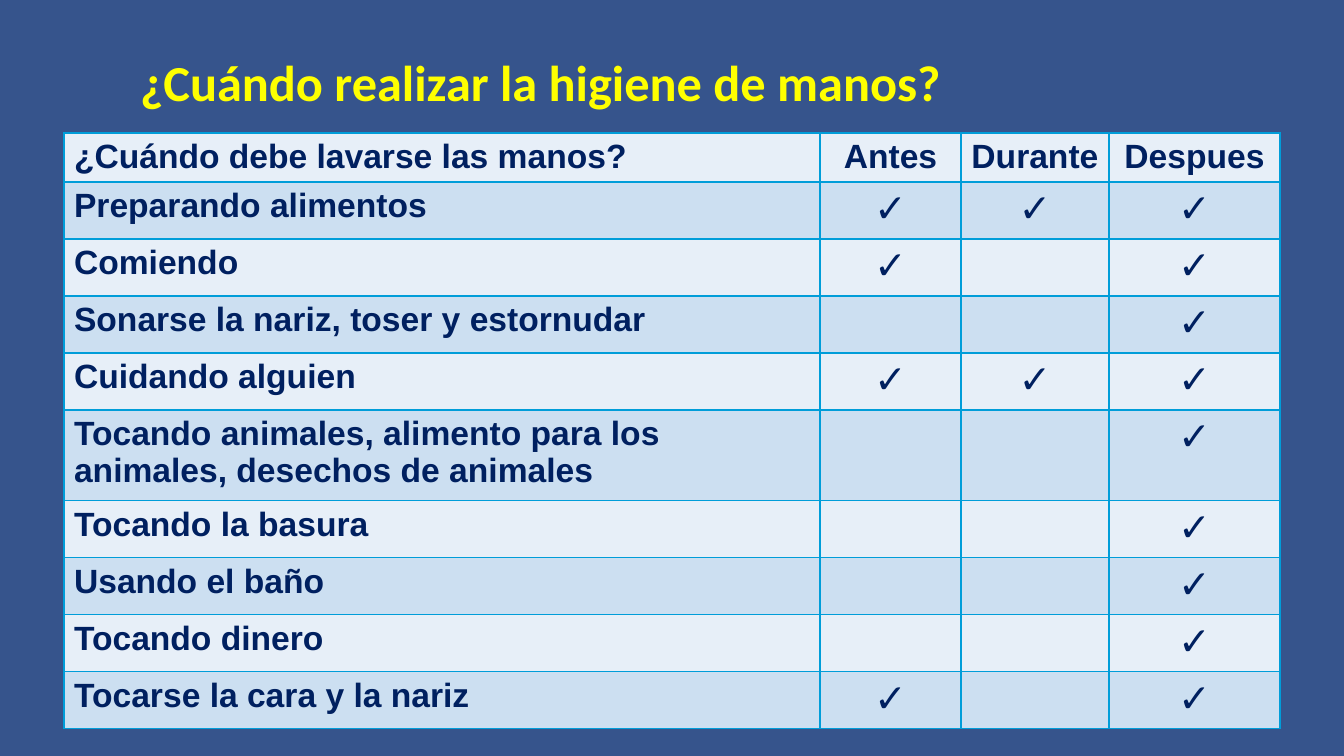
from lxml import etree
from pptx import Presentation
from pptx.dml.color import RGBColor
from pptx.enum.text import MSO_ANCHOR as Anchor, MSO_AUTO_SIZE as AutoSize, PP_ALIGN as Align
from pptx.oxml.ns import qn
from pptx.util import Emu, Pt

PX = 914400 / 100.8
NAVY, YELLOW, BLUE, CYAN = "002060", "FFFF00", "36548C", "009DD9"
BANDS = ["E7EFF8", "CCDFF1"]


def px(length):
    return Emu(round(length * PX))


def paint(fill, color):
    fill.solid()
    fill.fore_color.rgb = RGBColor.from_string(color)


deck = Presentation()
deck.slide_width, deck.slide_height = px(1344), px(756)
page = deck.slides.add_slide(deck.slide_layouts[5])
paint(page.background.fill, BLUE)

# Title
title = page.shapes.title
title.left, title.top, title.width, title.height = px(130), px(46), px(1061), px(72)
frame = title.text_frame
frame.text = "¿Cuándo realizar la higiene de manos?"
frame.word_wrap = True
frame.auto_size = AutoSize.NONE
frame.vertical_anchor = Anchor.TOP
para = frame.paragraphs[0]
para.alignment = Align.LEFT
font = para.runs[0].font
font.name, font.size, font.bold = "Calibri", Pt(36), True
font.color.rgb = RGBColor.from_string(YELLOW)

# Table content: activity, then a mark for before, during and after
headings = ["¿Cuándo debe lavarse las manos?", "Antes", "Durante", "Despues"]
activities = [
    ("Preparando alimentos", "✓", "✓", "✓"),
    ("Comiendo", "✓", "", "✓"),
    ("Sonarse la nariz, toser y estornudar", "", "", "✓"),
    ("Cuidando alguien", "✓", "✓", "✓"),
    ("Tocando animales, alimento para los animales, desechos de animales", "", "", "✓"),
    ("Tocando la basura", "", "", "✓"),
    ("Usando el baño", "", "", "✓"),
    ("Tocando dinero", "", "", "✓"),
    ("Tocarse la cara y la nariz", "✓", "", "✓"),
]
rows = [headings, *activities]
widths = [756, 141, 148, 171]
heights = [49] + [57] * 4 + [91] + [57] * 4

# Table grid
table = page.shapes.add_table(len(rows), len(widths), px(64), px(133),
                              px(sum(widths)), px(sum(heights))).table
for column, width in zip(table.columns, widths):
    column.width = px(width)
for row, height in zip(table.rows, heights):
    row.height = px(height)

# Cells
for r, texts in enumerate(rows):
    for c, text in enumerate(texts):
        cell = table.cell(r, c)
        paint(cell.fill, BANDS[r % 2])
        cell.text = text
        para = cell.text_frame.paragraphs[0]
        para.alignment = Align.CENTER if c else Align.LEFT
        for span in para.runs:
            span.font.name, span.font.bold = "Arial", True
            span.font.size = Pt(28 if text == "✓" else 24)
            span.font.color.rgb = RGBColor.from_string(NAVY)
        # Borders go before the fill
        properties = cell._tc.get_or_add_tcPr()
        for i, side in enumerate(["a:lnL", "a:lnR", "a:lnT", "a:lnB"]):
            border = etree.Element(qn(side), w=str(Pt(1)))
            solid = etree.SubElement(border, qn("a:solidFill"))
            etree.SubElement(solid, qn("a:srgbClr"), val=CYAN)
            properties.insert(i, border)

deck.save("out.pptx")
